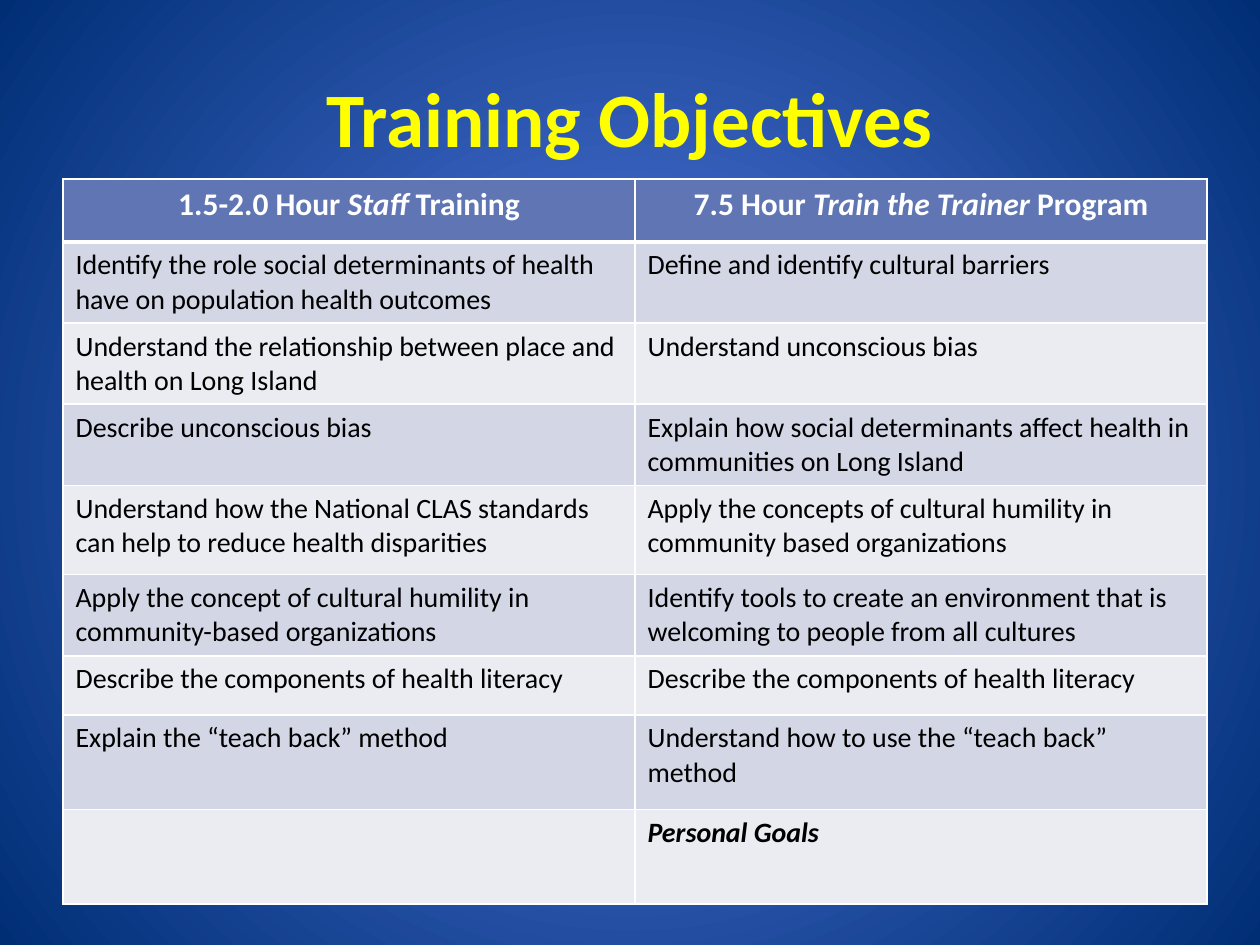
from lxml.etree import SubElement
from pptx import Presentation
from pptx.dml.color import RGBColor
from pptx.enum.text import MSO_ANCHOR, PP_ALIGN as Align
from pptx.oxml.ns import qn
from pptx.util import Inches, Pt

FONT = "Calibri"
COLORS = {
    "glow": "547BE2", "edge": "002E75", "title": "FFFF00",
    "header": "6076B4", "odd": "D2D6E5", "even": "EAECF2",
    "white": "FFFFFF", "black": "000000",
}
ROW_HEIGHTS = [0.5, 0.64, 0.64, 0.64, 0.71, 0.64, 0.47, 0.75, 0.75]
COLUMN_WIDTH = 4.54

# Each header is a list of (text, italic) runs
HEADERS = [
    [("1.5-2.0 Hour ", False), ("Staff", True), (" Training", False)],
    [("7.5 Hour ", False), ("Train the Trainer ", True), ("Program", False)],
]
OBJECTIVES = [
    ("Identify the role social determinants of health have on population health outcomes",
     "Define and identify cultural barriers"),
    ("Understand the relationship between place and health on Long Island",
     "Understand unconscious bias"),
    ("Describe unconscious bias",
     "Explain how social determinants affect health in communities on Long Island"),
    ("Understand how the National CLAS standards can help to reduce health disparities",
     "Apply the concepts of cultural humility in community based organizations"),
    ("Apply the concept of cultural humility in community-based organizations",
     "Identify tools to create an environment that is welcoming to people from all cultures"),
    ("Describe the components of health literacy",
     "Describe the components of health literacy"),
    ("Explain the “teach back” method",
     "Understand how to use the “teach back” method"),
    ("", "Personal Goals"),
]


def rgb(name):
    return RGBColor.from_string(COLORS[name])


def add_run(paragraph, text, size, color, bold=False, italic=False):
    run = paragraph.add_run()
    run.text = text
    font = run.font
    font.name, font.size = FONT, Pt(size)
    font.bold, font.italic = bold, italic
    font.color.rgb = rgb(color)


def set_background(slide):
    fill = slide.background.fill
    fill.gradient()
    for stop, color, position in zip(fill.gradient_stops, ("glow", "edge"), (0, 1)):
        stop.color.rgb = rgb(color)
        stop.position = position
    # Turn the linear gradient into a circle around the slide centre
    gradient = slide.element.find(".//" + qn("a:gradFill"))
    gradient.remove(gradient.find(qn("a:lin")))
    circle = SubElement(gradient, qn("a:path"), path="circle")
    SubElement(circle, qn("a:fillToRect"), dict.fromkeys("ltrb", "50000"))


def set_title(slide, text):
    title = slide.shapes.title
    title.left, title.top = Inches(0.5), Inches(0.3)
    title.width, title.height = Inches(9), Inches(1.25)
    title.text_frame.vertical_anchor = MSO_ANCHOR.MIDDLE
    paragraph = title.text_frame.paragraphs[0]
    paragraph.alignment = Align.CENTER
    add_run(paragraph, text, 44, "title", bold=True)


def style_cell(cell, fill, top=1, bottom=1):
    # Borders come before the fill in the cell properties
    properties = cell._tc.get_or_add_tcPr()
    for side, width in (("L", 1), ("R", 1), ("T", top), ("B", bottom)):
        line = SubElement(properties, qn(f"a:ln{side}"), w=str(Pt(width)))
        solid = SubElement(line, qn("a:solidFill"))
        SubElement(solid, qn("a:srgbClr"), val=COLORS["white"])
    cell.fill.solid()
    cell.fill.fore_color.rgb = rgb(fill)


def add_objectives_table(slide):
    table = slide.shapes.add_table(
        len(ROW_HEIGHTS), len(HEADERS), Inches(0.5), Inches(1.42),
        Inches(COLUMN_WIDTH * len(HEADERS)), Inches(sum(ROW_HEIGHTS))).table
    for column in table.columns:
        column.width = Inches(COLUMN_WIDTH)
    for row, height in zip(table.rows, ROW_HEIGHTS):
        row.height = Inches(height)

    # Header row
    for index, runs in enumerate(HEADERS):
        cell = table.cell(0, index)
        style_cell(cell, "header", bottom=3)
        paragraph = cell.text_frame.paragraphs[0]
        paragraph.alignment = Align.CENTER
        for text, italic in runs:
            add_run(paragraph, text, 18, "white", bold=True, italic=italic)

    # Objectives in alternating bands
    for number, texts in enumerate(OBJECTIVES, start=1):
        for index, text in enumerate(texts):
            cell = table.cell(number, index)
            style_cell(cell, "odd" if number % 2 else "even", top=3 if number == 1 else 1)
            if text:
                goals = text == "Personal Goals"
                add_run(cell.text_frame.paragraphs[0], text, 16, "black", goals, goals)


def main():
    presentation = Presentation()
    presentation.slide_width, presentation.slide_height = Inches(10), Inches(7.5)
    slide = presentation.slides.add_slide(presentation.slide_layouts[5])
    set_background(slide)
    set_title(slide, "Training Objectives")
    add_objectives_table(slide)
    presentation.save("out.pptx")


if __name__ == "__main__":
    main()
